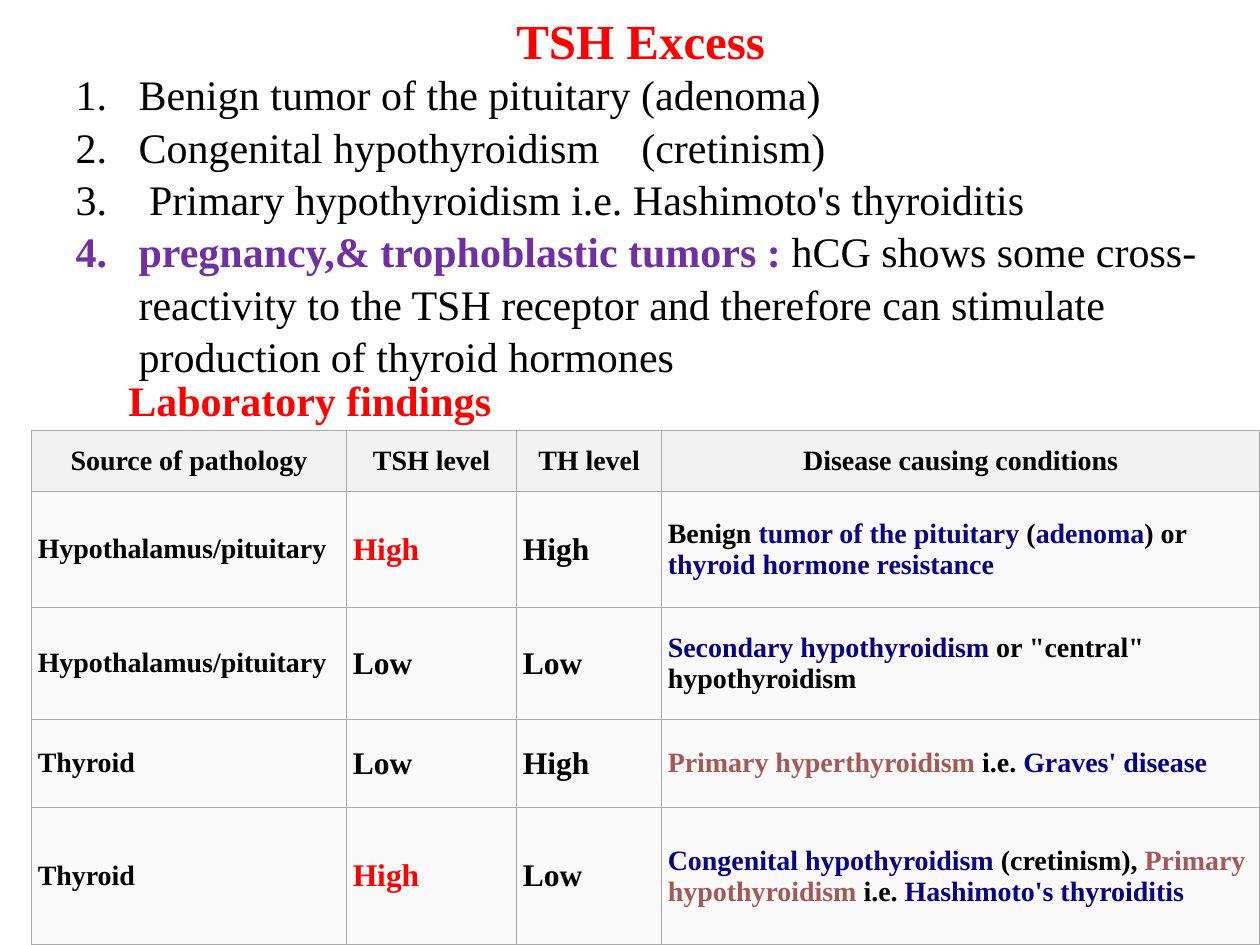
from lxml import etree
from pptx import Presentation
from pptx.dml.color import RGBColor
from pptx.enum import text as t
from pptx.oxml.ns import qn
from pptx.util import Inches, Pt

FONT = "Times New Roman"
BLACK, RED, PURPLE = "000000", "FF0000", "7030A0"
LINK, VISITED = "0B0080", "A55858"
HEADER_FILL, ROW_FILL, BORDER = "F2F2F2", "F9F9F9", "AAAAAA"

CAUSES = [
    [("Benign tumor of the pituitary (adenoma)", BLACK, False)],
    [("Congenital hypothyroidism\t(cretinism)", BLACK, False)],
    [(" Primary hypothyroidism i.e. Hashimoto's thyroiditis", BLACK, False)],
    [("pregnancy,& trophoblastic tumors : ", PURPLE, True),
     ("hCG shows some cross-reactivity to the TSH receptor and therefore can "
      "stimulate production of thyroid hormones", BLACK, False)],
]
HEADINGS = ["Source of pathology", "TSH level", "TH level", "Disease causing conditions"]
FINDINGS = [
    ("Hypothalamus/pituitary", "High", "High",
     [("Benign ", BLACK), ("tumor of the pituitary", LINK), (" (", BLACK),
      ("adenoma", LINK), (") or ", BLACK), ("thyroid hormone resistance", LINK)]),
    ("Hypothalamus/pituitary", "Low", "Low",
     [("Secondary hypothyroidism", LINK), (' or "central" hypothyroidism', BLACK)]),
    ("Thyroid", "Low", "High",
     [("Primary hyperthyroidism", VISITED), (" i.e. ", BLACK), ("Graves' disease", LINK)]),
    ("Thyroid", "High", "Low",
     [("Congenital hypothyroidism", LINK), (" (cretinism), ", BLACK),
      ("Primary hypothyroidism", VISITED), (" i.e. ", BLACK),
      ("Hashimoto's thyroiditis", LINK)]),
]
COLUMN_WIDTHS = [2.5, 1.35, 1.15, 4.75]
ROW_HEIGHTS = [0.48, 0.92, 0.89, 0.7, 1.09]


def rgb(value):
    return RGBColor.from_string(value)


def place(shape, left, top, width, height):
    shape.left, shape.top = Inches(left), Inches(top)
    shape.width, shape.height = Inches(width), Inches(height)


def write(paragraph, runs, size, bold=None):
    """Fill a paragraph with (text, colour[, bold]) runs."""
    paragraph.font.name, paragraph.font.size = FONT, Pt(size)
    paragraph.font.bold = bold
    for words, colour, *run_bold in runs:
        run = paragraph.add_run()
        run.text = words
        run.font.name, run.font.size = FONT, Pt(size)
        run.font.bold = run_bold[0] if run_bold else bold
        run.font.color.rgb = rgb(colour)


def top_frame(shape):
    frame = shape.text_frame
    frame.word_wrap = True
    frame.auto_size = t.MSO_AUTO_SIZE.NONE
    frame.vertical_anchor = t.MSO_ANCHOR.TOP
    return frame


def add_title(slide, left, top, width, height):
    place(slide.shapes.title, left, top, width, height)
    heading = top_frame(slide.shapes.title).paragraphs[0]
    heading.alignment = t.PP_ALIGN.CENTER
    write(heading, [("TSH Excess", RED)], 28, True)


def add_causes(slide, left, top, width, height):
    body = slide.placeholders[1]
    place(body, left, top, width, height)
    frame = top_frame(body)
    for i, runs in enumerate(CAUSES):
        cause = frame.add_paragraph() if i else frame.paragraphs[0]
        write(cause, runs, 24)
        cause.space_before = cause.space_after = Pt(0)
        cause.line_spacing = 1.04
        # Numbering with a hanging indent, and a stop for the bracketed names
        props = cause._p.get_or_add_pPr()
        props.set("marL", str(Inches(0.5)))
        props.set("indent", str(-Inches(0.5)))
        number = etree.Element(qn("a:buAutoNum"), type="arabicPeriod")
        stops = etree.Element(qn("a:tabLst"))
        etree.SubElement(stops, qn("a:tab"), pos=str(Inches(4.49)), algn="l")
        defaults = props.find(qn("a:defRPr"))
        defaults.addprevious(number)
        defaults.addprevious(stops)


def add_findings_label(slide, left, top, width, height):
    box = slide.shapes.add_textbox(*map(Inches, (left, top, width, height)))
    write(top_frame(box).paragraphs[0], [("Laboratory findings", RED)], 24, True)


def style_cell(cell, fill):
    cell.vertical_anchor = t.MSO_ANCHOR.MIDDLE
    cell.margin_left = cell.margin_right = Inches(0.05)
    cell.margin_top = cell.margin_bottom = Inches(0.03)
    cell.fill.solid()
    cell.fill.fore_color.rgb = rgb(fill)
    props = cell._tc.get_or_add_tcPr()
    for i, side in enumerate(("a:lnL", "a:lnR", "a:lnT", "a:lnB")):
        line = etree.Element(qn(side), w=str(Pt(0.75)))
        solid = etree.SubElement(line, qn("a:solidFill"))
        etree.SubElement(solid, qn("a:srgbClr"), val=BORDER)
        props.insert(i, line)


def add_findings_table(slide, left, top):
    table = slide.shapes.add_table(
        len(ROW_HEIGHTS), len(COLUMN_WIDTHS), Inches(left), Inches(top),
        Inches(sum(COLUMN_WIDTHS)), Inches(sum(ROW_HEIGHTS))).table
    table.first_row = table.horz_banding = False
    for column, width in zip(table.columns, COLUMN_WIDTHS):
        column.width = Inches(width)
    for row, height in zip(table.rows, ROW_HEIGHTS):
        row.height = Inches(height)

    # Heading row
    for cell, heading in zip(table.rows[0].cells, HEADINGS):
        style_cell(cell, HEADER_FILL)
        paragraph = cell.text_frame.paragraphs[0]
        paragraph.alignment = t.PP_ALIGN.CENTER
        write(paragraph, [(heading, BLACK)], 16, True)

    # One row for each pattern; a high TSH level is red
    for r, (source, tsh, th, conditions) in enumerate(FINDINGS, 1):
        contents = [([(source, BLACK)], 16),
                    ([(tsh, RED if tsh == "High" else BLACK)], 18),
                    ([(th, BLACK)], 18),
                    (conditions, 16)]
        for cell, (runs, size) in zip(table.rows[r].cells, contents):
            style_cell(cell, ROW_FILL)
            write(cell.text_frame.paragraphs[0], runs, size, True)


def main():
    deck = Presentation()
    deck.slide_width, deck.slide_height = Inches(10), Inches(7.5)
    slide = deck.slides.add_slide(deck.slide_layouts[1])
    add_title(slide, 0.5, 0.03, 9.17, 0.5)
    add_causes(slide, 0.5, 0.48, 9.17, 2.52)
    add_findings_table(slide, 0.25, 3.42)
    add_findings_label(slide, 0.92, 2.92, 4.08, 0.5)
    deck.save("out.pptx")


if __name__ == "__main__":
    main()
